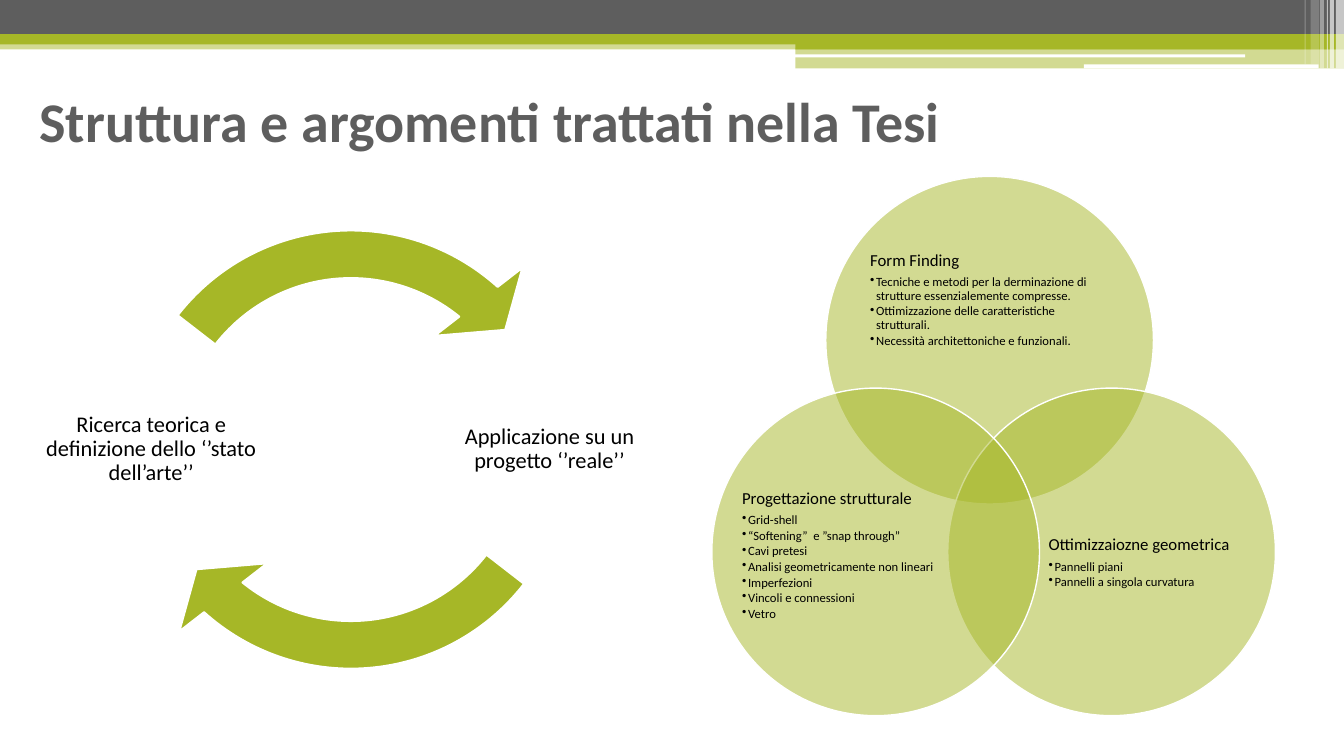
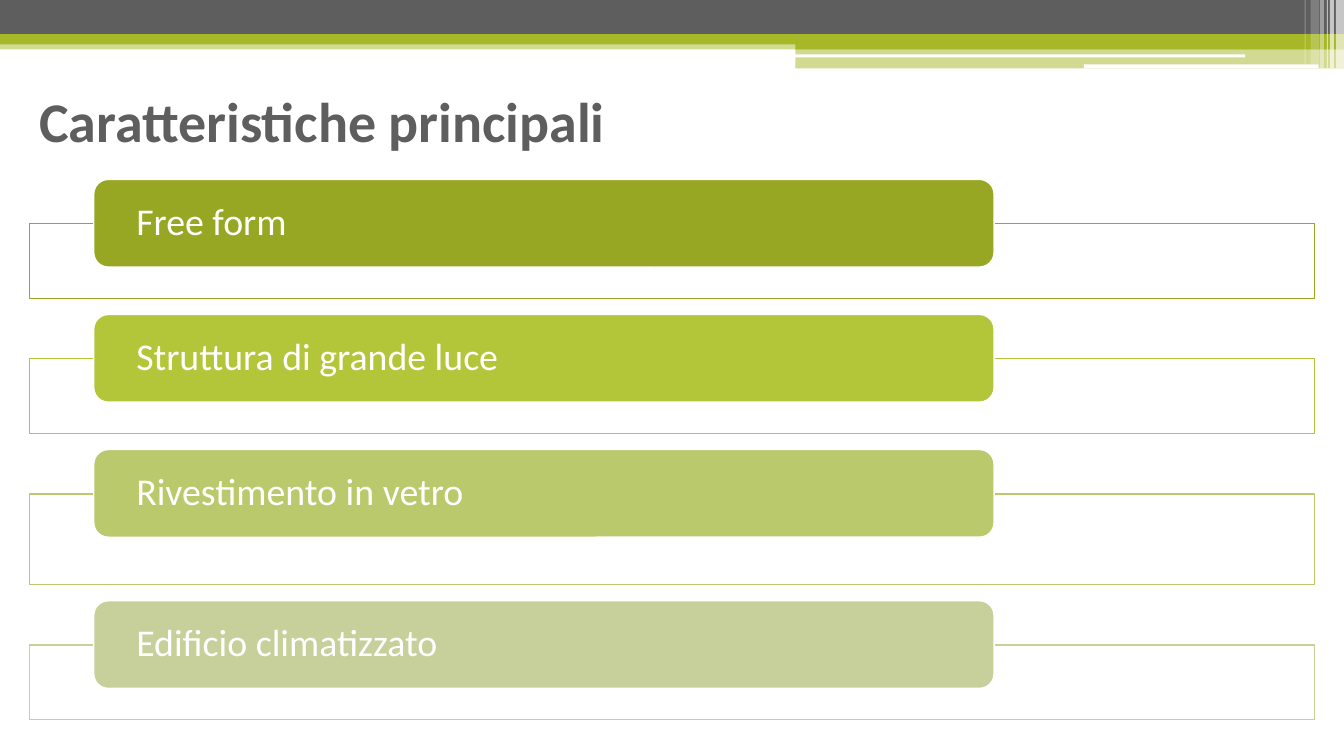
from dataclasses import dataclass

from lxml import etree
from pptx import Presentation
from pptx import util as u
from pptx.dml.color import RGBColor
from pptx.enum import shapes, text
from pptx.oxml.ns import qn

MSO = shapes.MSO_SHAPE
MIDDLE = text.MSO_ANCHOR.MIDDLE
LEFT, CENTER = text.PP_ALIGN.LEFT, text.PP_ALIGN.CENTER


@dataclass(frozen=True)
class Theme:
    font: str = "Calibri"
    green: str = "A6B727"
    grey: str = "5E5E5E"
    white: str = "FFFFFF"
    black: str = "000000"
    shades: tuple = ("97A623", "B3C639", "BAC96C", "C7D09A")
    title: float = 40
    label: float = 27
    cycle: float = 16
    heading: float = 12
    bullet: float = 9


T = Theme()

BANDS = [
    (0, 0.4, 13.33, 0.09, T.green, 50),
    (0, 0, 13.33, 0.34, T.grey, 100),
    (0, 0.34, 13.33, 0.1, T.green, 100),
    (7.89, 0.39, 5.44, 0.1, T.green, 100),
    (7.89, 0.48, 5.44, 0.2, T.green, 50),
    (7.88, 0.54, 4.47, 0.03, T.white, 100),
    (10.75, 0.64, 2.33, 0.04, T.white, 100),
    (13.25, 0, 0.08, 0.68, T.white, 65),
    (13.19, 0, 0.04, 0.68, T.white, 65),
    (13.16, 0, 0.01, 0.68, T.white, 60),
    (13.09, 0, 0.04, 0.68, T.white, 40),
    (13, 0, 0.08, 0.64, T.white, 20),
    (12.94, 0, 0.01, 0.64, T.white, 30),
]


def assign(obj, values):
    for name, value in values.items():
        setattr(obj, name, value)


class Deck:
    def __init__(self):
        self.prs = Presentation()
        assign(self.prs, {"slide_width": u.Inches(13.33), "slide_height": u.Inches(7.5)})
        self.layout = self.prs.slide_layouts[5]
        self.s = None

    def slide(self, title):
        first = self.s is None
        self.s = self.prs.slides.add_slide(self.layout)
        if first:
            self.bands()
        sp = self.s.shapes.title
        self.place(sp, 0.29, 0.63, 12.38, 1.12)
        tf = sp.text_frame
        assign(tf, {"word_wrap": True, "vertical_anchor": MIDDLE})
        self.paragraph(tf.paragraphs[0], title, T.title, T.grey, bold=True, spacing=1)

    def bands(self):
        for ph in list(self.layout.placeholders):
            if ph.placeholder_format.idx:
                self.layout.shapes.element.remove(ph.element)
        for *at, color, alpha in BANDS:
            sp = self.shape(MSO.RECTANGLE, at, color, alpha)
            self.layout.shapes.element.append(sp.element)

    def place(self, sp, *at):
        names = ("left", "top", "width", "height")
        assign(sp, dict(zip(names, map(u.Inches, at))))

    def shape(self, kind, at, fill, alpha=100, line=None, width=1.0, adj=()):
        sp = self.s.shapes.add_shape(kind, *map(u.Inches, at))
        sp.shadow.inherit = False
        sp.fill.solid()
        sp.fill.fore_color.rgb = RGBColor.from_string(fill)
        if alpha < 100:
            clr = sp.element.spPr.find(qn("a:solidFill"))[0]
            etree.SubElement(clr, qn("a:alpha"), val=str(alpha * 1000))
        if line:
            sp.line.color.rgb = RGBColor.from_string(line)
            sp.line.width = u.Pt(width)
        else:
            sp.line.fill.background()
        for i, value in enumerate(adj):
            sp.adjustments[i] = value
        return sp

    def frame(self, sp, left=0, top=0, right=0, bottom=0):
        tf = sp.text_frame
        assign(tf, {
            "word_wrap": True, "vertical_anchor": MIDDLE,
            "margin_left": u.Inches(left), "margin_top": u.Inches(top),
            "margin_right": u.Inches(right), "margin_bottom": u.Inches(bottom),
        })
        return tf

    def textbox(self, at, **margins):
        return self.frame(self.s.shapes.add_textbox(*map(u.Inches, at)), **margins)

    def paragraph(self, p, words, size, color, bold=False, align=LEFT, spacing=0.9,
                  after=0.0, bullet=False):
        assign(p, {"alignment": align, "line_spacing": spacing, "space_after": u.Pt(after)})
        r = p.add_run()
        r.text = words
        assign(r.font, {"name": T.font, "size": u.Pt(size), "bold": bold})
        r.font.color.rgb = RGBColor.from_string(color)
        if bullet:
            pPr = p._p.get_or_add_pPr()
            indent = u.Inches(0.06)
            pPr.set("marL", str(indent))
            pPr.set("indent", str(-indent))
            etree.SubElement(pPr, qn("a:buChar"), char="•")

    def topic(self, circle, box, heading, bullets, bottom=0):
        self.shape(MSO.OVAL, (*circle, 3.25, 3.25), T.green, 50, T.white)
        tf = self.textbox(box, bottom=bottom)
        self.paragraph(tf.paragraphs[0], heading, T.heading, T.black, after=4.2)
        for words in bullets:
            self.paragraph(tf.add_paragraph(), words, T.bullet, T.black,
                           after=1.35, bullet=True)

    def cycle_step(self, left, words, turn):
        tf = self.textbox((left, 3.25, 2.42, 2.42), left=0.02, top=0.02,
                          right=0.02, bottom=0.02)
        self.paragraph(tf.paragraphs[0], words, T.cycle, T.black, align=CENTER)
        adj = (0.095, 6.857, 78.474 + turn, 22.67 + turn, 0.111)
        self.shape(MSO.CIRCULAR_ARROW, (0.99, 1.97, 4.98, 4.98), T.green,
                   line=T.white, width=1.5, adj=adj)

    def feature(self, top, height, words, color):
        self.shape(MSO.RECTANGLE, (0.29, top, 12.75, height), T.white, 90, color)
        sp = self.shape(MSO.ROUNDED_RECTANGLE, (0.93, top - 0.44, 8.93, 0.87),
                        color, line=T.white)
        tf = self.frame(sp, left=0.38, right=0.38)
        self.paragraph(tf.paragraphs[0], words, T.label, T.white)


def main():
    deck = Deck()

    deck.slide("Struttura e argomenti trattati nella Tesi")
    deck.topic((8.19, 1.75), (8.63, 2.32, 2.38, 1.46), "Form Finding", [
        "Tecniche e metodi per la derminazione di strutture essenzialemente compresse.",
        "Ottimizzazione delle caratteristiche strutturali.",
        "Necessità architettoniche e funzionali.",
    ], bottom=0.15)
    deck.topic((9.4, 3.85), (10.4, 4.69, 1.95, 1.79), "Ottimizzaiozne geometrica", [
        "Pannelli piani",
        "Pannelli a singola curvatura",
    ])
    deck.topic((7.06, 3.85), (7.36, 4.69, 1.95, 1.79), "Progettazione strutturale", [
        "Grid-shell",
        "“Softening”  e ”snap through”",
        "Cavi pretesi",
        "Analisi geometricamente non lineari",
        "Imperfezioni",
        "Vincoli e connessioni",
        "Vetro",
    ], bottom=0.15)
    half_turn = 108
    deck.cycle_step(4.24, "Applicazione su un progetto ‘’reale’’", 0)
    deck.cycle_step(0.29, "Ricerca teorica e definizione dello ‘’stato dell’arte’’", half_turn)

    deck.slide("Caratteristiche principali")
    features = [
        ("Free form", 0.74),
        ("Struttura di grande luce", 0.74),
        ("Rivestimento in vetro", 0.9),
        ("Edificio climatizzato", 0.74),
    ]
    top = 2.22
    for (words, height), color in zip(features, T.shades):
        deck.feature(top, height, words, color)
        top += height + 0.6

    deck.prs.save("out.pptx")


if __name__ == "__main__":
    main()
